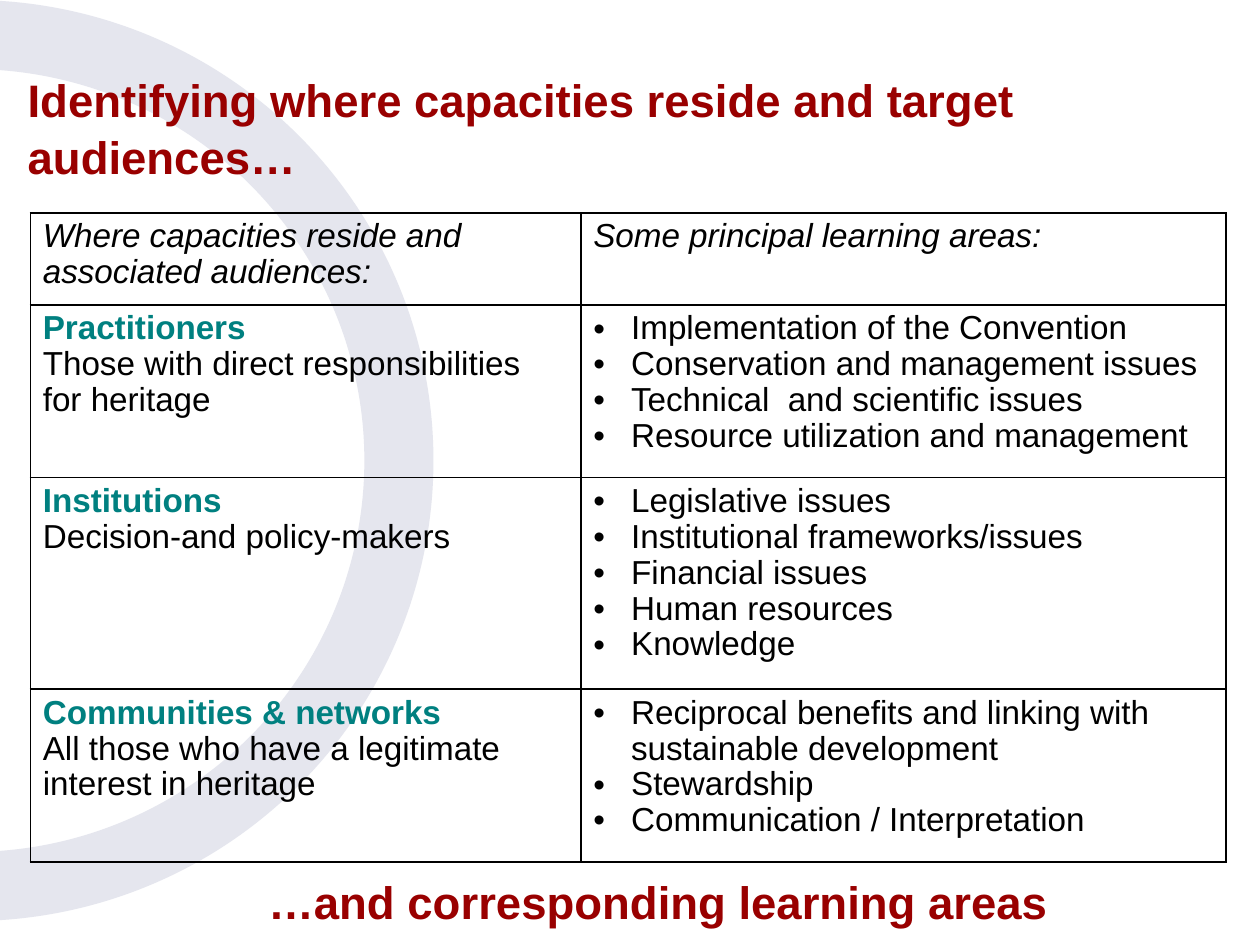
from lxml import etree
from pptx import Presentation, util as u
from pptx.dml.color import RGBColor
from pptx.enum import shapes, text
from pptx.oxml.ns import qn

Pt = u.Pt
RED, TEAL, BLACK, PALE = "990000", "008080", "000000", "E5E6EE"


def rgb(value):
    return RGBColor.from_string(value)


def format_font(font, size, colour, **styles):
    font.color.rgb = rgb(colour)
    for name, value in dict(styles, name="Arial", size=Pt(size)).items():
        setattr(font, name, value)


deck = Presentation()
deck.slide_width, deck.slide_height = Pt(720), Pt(540)
slide = deck.slides.add_slide(deck.slide_layouts[5])
title = slide.shapes.title

# Pale ring behind the content
ring = slide.shapes.add_shape(shapes.MSO_SHAPE.DONUT, Pt(-280.8), Pt(0), Pt(528.5), Pt(526.3))
ring.adjustments[0] = 0.075
ring.shadow.inherit = False
ring.fill.solid()
ring.fill.fore_color.rgb = rgb(PALE)
ring.line.fill.background()
slide.shapes._spTree.insert(2, ring._element)

# Audiences on the left, learning areas on the right
rows = [
    ("Practitioners", "Those with direct responsibilities for heritage",
     ["Implementation of the Convention", "Conservation and management issues",
      "Technical  and scientific issues", "Resource utilization and management"]),
    ("Institutions", "Decision-and policy-makers",
     ["Legislative issues", "Institutional frameworks/issues", "Financial issues",
      "Human resources", "Knowledge"]),
    ("Communities & networks", "All those who have a legitimate interest in heritage",
     ["Reciprocal benefits and linking with sustainable development", "Stewardship",
      "Communication / Interpretation"]),
]
headings = ["Where capacities reside and associated audiences:",
            "Some principal learning areas:"]
plain, italic, bold = (BLACK, {}), (BLACK, {"italic": True}), (TEAL, {"bold": True})
contents = [[[(heading, italic, False)] for heading in headings]]
for audience, description, areas in rows:
    contents.append([[(audience, bold, False), (description, plain, False)],
                     [(area, plain, True) for area in areas]])

frame = slide.shapes.add_table(4, 2, Pt(17.3), Pt(121.7), Pt(683.3), Pt(370.8))
table = frame.table
table.first_row = table.horz_banding = False
for column, width in zip(table.columns, (314.6, 368.7)):
    column.width = Pt(width)
for row, height in zip(table.rows, (52.6, 98.6, 121, 98.6)):
    row.height = Pt(height)

for r, row_content in enumerate(contents):
    for c, lines in enumerate(row_content):
        cell = table.cell(r, c)
        # Black cell borders, placed before the fill
        cell_properties = cell._tc.get_or_add_tcPr()
        for side in ("lnL", "lnR", "lnT", "lnB"):
            border = etree.SubElement(cell_properties, qn("a:" + side), w=str(Pt(1)))
            paint = etree.SubElement(border, qn("a:solidFill"))
            etree.SubElement(paint, qn("a:srgbClr"), val=BLACK)
        cell.fill.background()
        for i, (line, (colour, styles), bulleted) in enumerate(lines):
            body = cell.text_frame
            paragraph = body.paragraphs[0] if i == 0 else body.add_paragraph()
            paragraph.line_spacing = 0.97
            if bulleted:
                properties = paragraph._p.get_or_add_pPr()
                properties.set("marL", str(Pt(21.6)))
                properties.set("indent", str(Pt(-21.6)))
                etree.SubElement(properties, qn("a:buFont"), typeface="Arial")
                etree.SubElement(properties, qn("a:buChar"), char="•")
            run = paragraph.add_run()
            run.text = line
            format_font(run.font, 19, colour, **styles)

# Title above the table and its continuation below
closing = slide.shapes.add_textbox(Pt(0), Pt(0), Pt(720), Pt(40))
captions = [
    (title, "Identifying where capacities reside and target audiences…",
     {"left": 8.6, "top": 36, "width": 720, "height": 70.6}, text.PP_ALIGN.LEFT),
    (closing, "…and corresponding learning areas",
     {"left": -113.8, "top": 494.6, "width": 720, "height": 70.6}, text.PP_ALIGN.RIGHT),
]
for caption, wording, place, alignment in captions:
    for name, value in place.items():
        setattr(caption, name, Pt(value))
    body = caption.text_frame
    body.word_wrap = True
    body.auto_size = text.MSO_AUTO_SIZE.NONE
    body.vertical_anchor = text.MSO_ANCHOR.TOP
    paragraph = body.paragraphs[0]
    paragraph.alignment = alignment
    paragraph.line_spacing = 1.05
    run = paragraph.add_run()
    run.text = wording
    format_font(run.font, 26, RED, bold=True)

deck.save("out.pptx")
